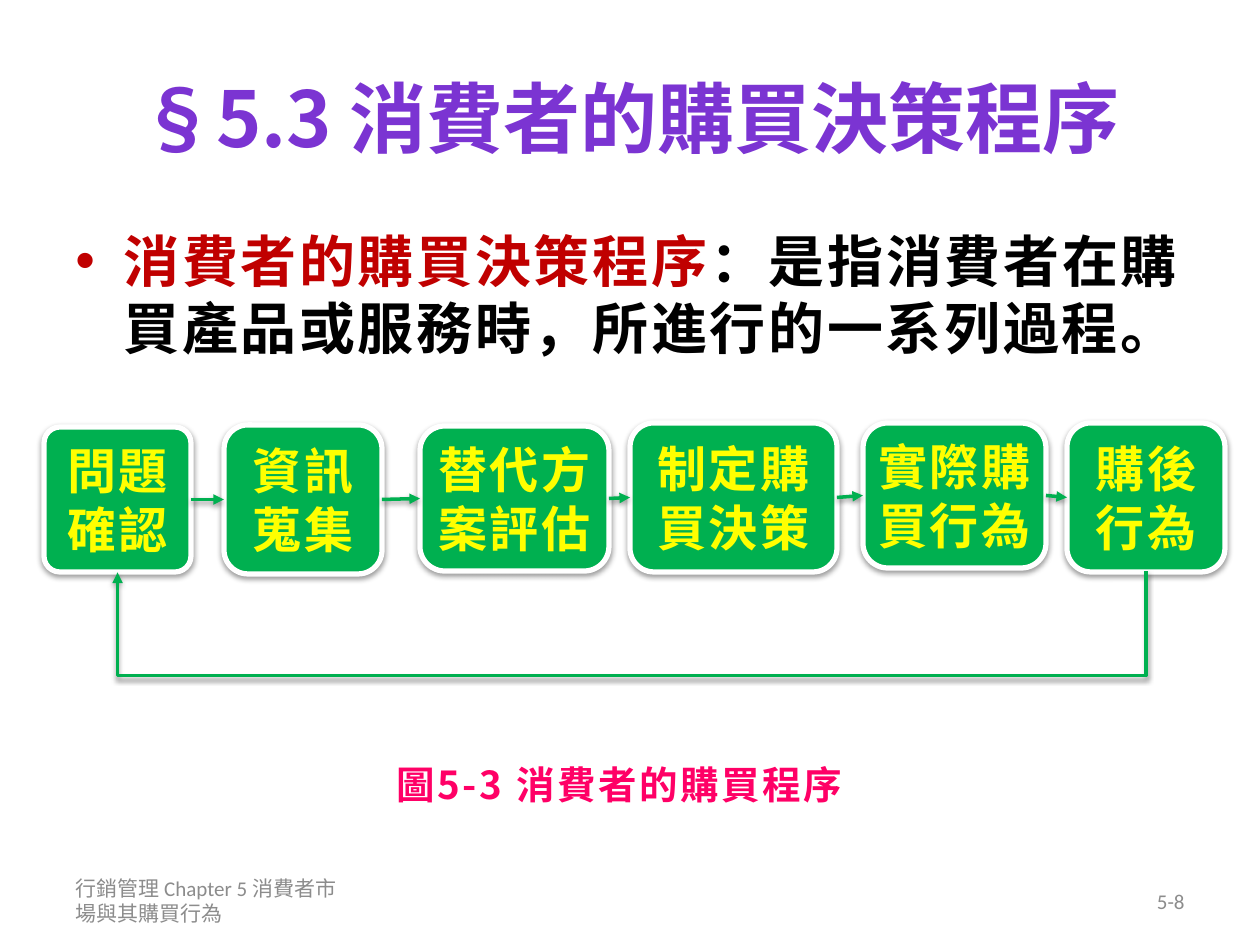
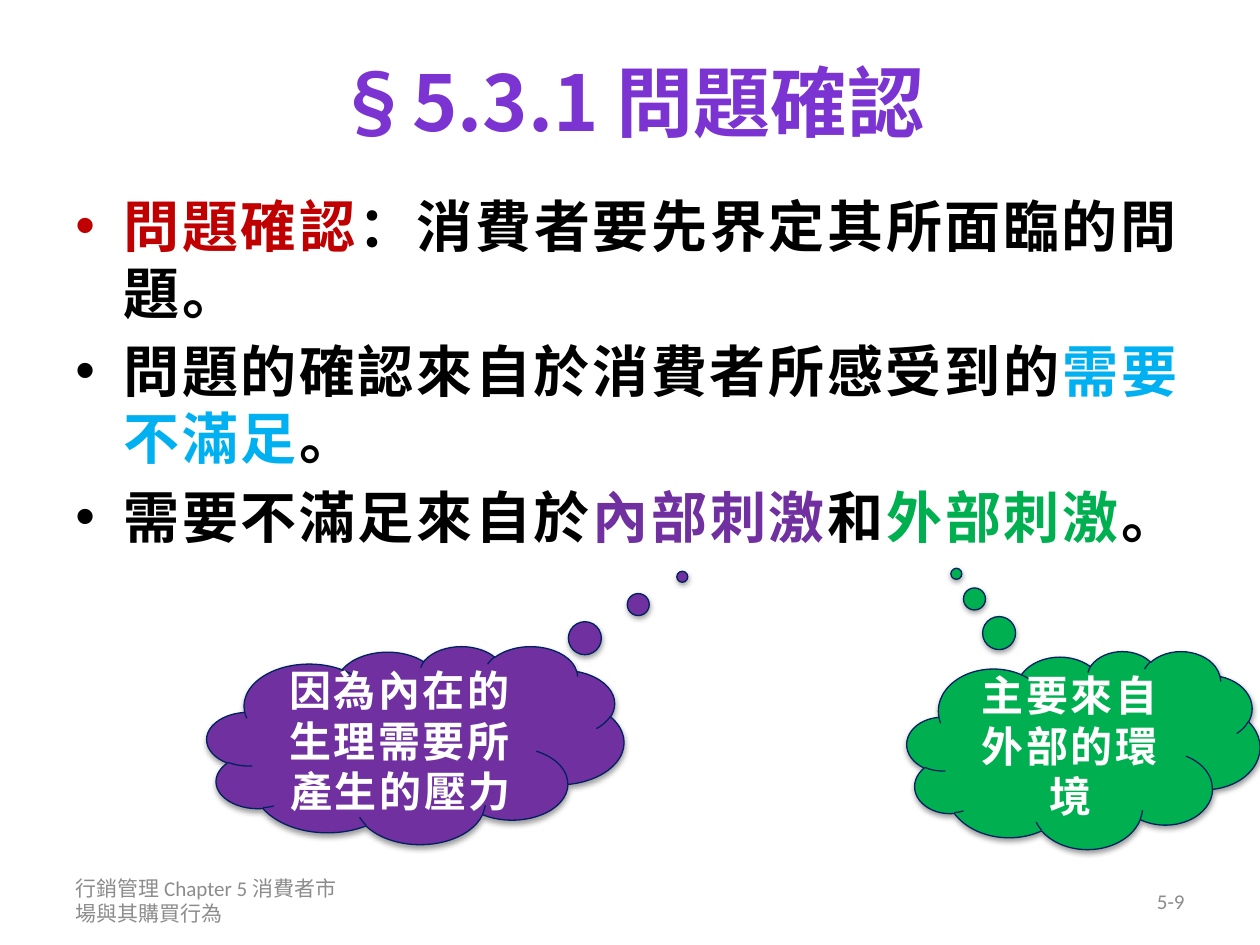
from lxml.etree import SubElement
from pptx import Presentation
from pptx.dml.color import RGBColor
from pptx.enum.shapes import MSO_CONNECTOR, MSO_SHAPE
from pptx.enum.text import MSO_ANCHOR, PP_ALIGN
from pptx.oxml.ns import qn
from pptx.util import Pt

SCALE = 914400 / 126  # EMU in one px
WIDE, HIGH = 1260, 945

WHITE = RGBColor(0xFF, 0xFF, 0xFF)
BLACK = RGBColor(0, 0, 0)
GRAY = RGBColor(0x8C, 0x8C, 0x8C)
VIOLET = RGBColor(0x7B, 0x34, 0xD2)
PURPLE = RGBColor(0x70, 0x30, 0xA0)
RED = RGBColor(0xC0, 0, 0)
BLUE = RGBColor(0, 0xB0, 0xF0)
NAVY = RGBColor(0, 0x20, 0x60)
GREEN = RGBColor(0, 0xB0, 0x50)
YELLOW = RGBColor(0xFF, 0xFF, 0)
PINK = RGBColor(0xFF, 0, 0x66)

SANS = "Noto Sans CJK SC"
TITLE = dict(size=Pt(44), name=SANS, bold=True)
BODY = dict(size=Pt(32), name=SANS, bold=True)
STEP = dict(size=Pt(28), name=SANS, bold=True)
CLOUD = dict(size=Pt(24), name=SANS, bold=True)
LABEL = dict(size=Pt(22), name=SANS, bold=True)
FOOT = dict(size=Pt(12), name="Calibri", bold=False)

LEFT, MID, RIGHT = PP_ALIGN.LEFT, PP_ALIGN.CENTER, PP_ALIGN.RIGHT


def px(*nums):
    return [round(n * SCALE) for n in nums]


class Deck:
    def __init__(self):
        self.prs = Presentation()
        self.prs.slide_width, self.prs.slide_height = px(WIDE, HIGH)
        self.slide = None

    def start(self, title, top, high, page):
        """Add a slide with its title and footers."""
        self.slide = self.prs.slides.add_slide(self.prs.slide_layouts[5])
        head = self.slide.shapes.title
        head.left, head.top, head.width, head.height = px(63, top, 1134, high)
        head.text_frame.vertical_anchor = MSO_ANCHOR.MIDDLE
        para = head.text_frame.paragraphs[0]
        para.alignment = MID
        self.run(para, title, TITLE, VIOLET)
        name = "行銷管理 Chapter 5 消費者市場與其購買行為"
        for left, text, align in ((63, name, LEFT), (903, page, RIGHT)):
            self.text((left, 876, 294, 50), text, FOOT, GRAY, align, MSO_ANCHOR.MIDDLE)

    def run(self, para, text, style, color, gap=None):
        run = para.add_run()
        run.text = text
        run.font.color.rgb = color
        for key, val in style.items():
            setattr(run.font, key, val)
        prop = run.font._element
        SubElement(prop, qn("a:ea")).set("typeface", style["name"])
        if gap:
            prop.set("spc", str(gap))

    def text(self, box, text, style, color, align=LEFT, anchor=MSO_ANCHOR.TOP, gap=None):
        frame = self.slide.shapes.add_textbox(*px(*box)).text_frame
        frame.word_wrap = True
        frame.vertical_anchor = anchor
        para = frame.paragraphs[0]
        para.alignment = align
        self.run(para, text, style, color, gap)

    def points(self, box, items):
        """Write a bullet list; each item is a list of (text, colour)."""
        frame = self.slide.shapes.add_textbox(*px(*box)).text_frame
        frame.word_wrap = True
        for i, item in enumerate(items):
            para = frame.add_paragraph() if i else frame.paragraphs[0]
            para.line_spacing = Pt(38.4)
            if i:
                para.space_before = Pt(6.4)
            prop = para._p.get_or_add_pPr()
            dent = px(48)[0]
            prop.set("marL", str(dent))
            prop.set("indent", str(-dent))
            SubElement(prop, qn("a:buFont")).set("typeface", "Arial")
            SubElement(prop, qn("a:buChar")).set("char", "•")
            for text, color in item:
                self.run(para, text, BODY, color, 150)

    def shade(self, part):
        """Give a part the soft drop shadow."""
        props = part._element.spPr
        list_ = props.find(qn("a:effectLst"))
        if list_ is None:
            list_ = SubElement(props, qn("a:effectLst"))
        drop = SubElement(list_, qn("a:outerShdw"), blurRad="40000", dist="20000",
                          dir="5400000", rotWithShape="0")
        tint = SubElement(drop, qn("a:srgbClr"), val="000000")
        SubElement(tint, qn("a:alpha"), val="38000")

    def shape(self, kind, box, adj, fill, edge, lines, style, color, wrap):
        part = self.slide.shapes.add_shape(kind, *px(*box))
        for i, val in enumerate(adj):
            part.adjustments[i] = val
        part.fill.solid()
        part.fill.fore_color.rgb = fill
        part.line.color.rgb, part.line.width = edge
        part.shadow.inherit = False
        self.shade(part)
        frame = part.text_frame
        frame.word_wrap = wrap
        frame.vertical_anchor = MSO_ANCHOR.MIDDLE
        for i, line in enumerate(lines):
            para = frame.add_paragraph() if i else frame.paragraphs[0]
            para.alignment = MID
            para.line_spacing = Pt(1.2 * style["size"].pt)
            self.run(para, line, style, color, 150)
        return part

    def arrow(self, kind, start, side, end, stop):
        """Join two shapes at the given sides."""
        link = self.slide.shapes.add_connector(kind, 0, 0, 0, 0)
        link.begin_connect(start, side)
        link.end_connect(end, stop)
        link.line.color.rgb = GREEN
        link.line.width = Pt(2)
        SubElement(link.line._get_or_add_ln(), qn("a:tailEnd"), type="triangle")
        self.shade(link)
        return link

    def loop(self, start, end, drop):
        """Lead back from one shape to another, passing drop px below them."""
        link = self.arrow(MSO_CONNECTOR.ELBOW, start, 2, end, 2)
        thin = px(1)[0]
        span = link.begin_x - link.end_x
        center, base = (link.begin_x + link.end_x) // 2, link.begin_y
        # A thin upright frame, turned a quarter, makes the bend open upward
        link.left, link.top = center - thin // 2, base - span // 2
        link.width, link.height = thin, span
        props = link._element.spPr
        form = props.find(qn("a:xfrm"))
        form.attrib.pop("flipH", None)
        form.attrib.pop("flipV", None)
        form.set("rot", "5400000")
        SubElement(props.find(".//" + qn("a:avLst")), qn("a:gd"), name="adj1",
                   fmla=f"val {drop * 100000}")


def main():
    deck = Deck()

    # Buying process
    deck.start("§5.3 消費者的購買決策程序", 38, 157, "5-8")
    deck.points((63, 220, 1134, 213), [
        [("消費者的購買決策程序", RED),
         ("：是指消費者在購買產品或服務時，所進行的一系列過程。", BLACK)]])
    steps = [
        ((44, 427, 147, 145), 0.11, ("問題", "確認")),
        ((224, 425, 158, 149), 0.16, ("資訊", "蒐集")),
        ((420, 426, 189, 145), 0.17, ("替代方", "案評估")),
        ((630, 423, 207, 149), 0.16, ("制定購", "買決策")),
        ((863, 423, 183, 145), 0.17, ("實際購", "買行為")),
        ((1067, 423, 158, 149), 0.16, ("購後", "行為")),
    ]
    boxes = [deck.shape(MSO_SHAPE.ROUNDED_RECTANGLE, box, [turn], GREEN,
                        (WHITE, Pt(3)), lines, STEP, YELLOW, False)
             for box, turn, lines in steps]
    for here, next_ in zip(boxes, boxes[1:]):
        deck.arrow(MSO_CONNECTOR.STRAIGHT, here, 3, next_, 1)
    deck.loop(boxes[-1], boxes[0], 105)
    deck.text((384, 755, 505, 59), "圖5-3 消費者的購買程序", LABEL, PINK, gap=150)

    # Problem recognition
    deck.start("§5.3.1 問題確認", 16, 169, "5-9")
    deck.points((63, 185, 1134, 466), [
        [("問題確認", RED), ("：消費者要先界定其所面臨的問題。", BLACK)],
        [("問題的確認來自於消費者所感受到的", BLACK), ("需要不滿足", BLUE), ("。", BLACK)],
        [("需要不滿足來自於", BLACK), ("內部刺激", PURPLE), ("和", BLACK),
         ("外部刺激", GREEN), ("。", BLACK)]])
    clouds = [
        ((207, 646, 417, 198), (0.64, -0.85), PURPLE, "因為內在的生理需要所產生的壓力"),
        ((907, 651, 353, 198), (-0.36, -0.89), GREEN, "主要來自外部的環境"),
    ]
    for box, tip, fill, text in clouds:
        deck.shape(MSO_SHAPE.CLOUD_CALLOUT, box, tip, fill, (NAVY, Pt(0.75)),
                   [text], CLOUD, WHITE, True)

    deck.prs.save("out.pptx")


if __name__ == "__main__":
    main()
